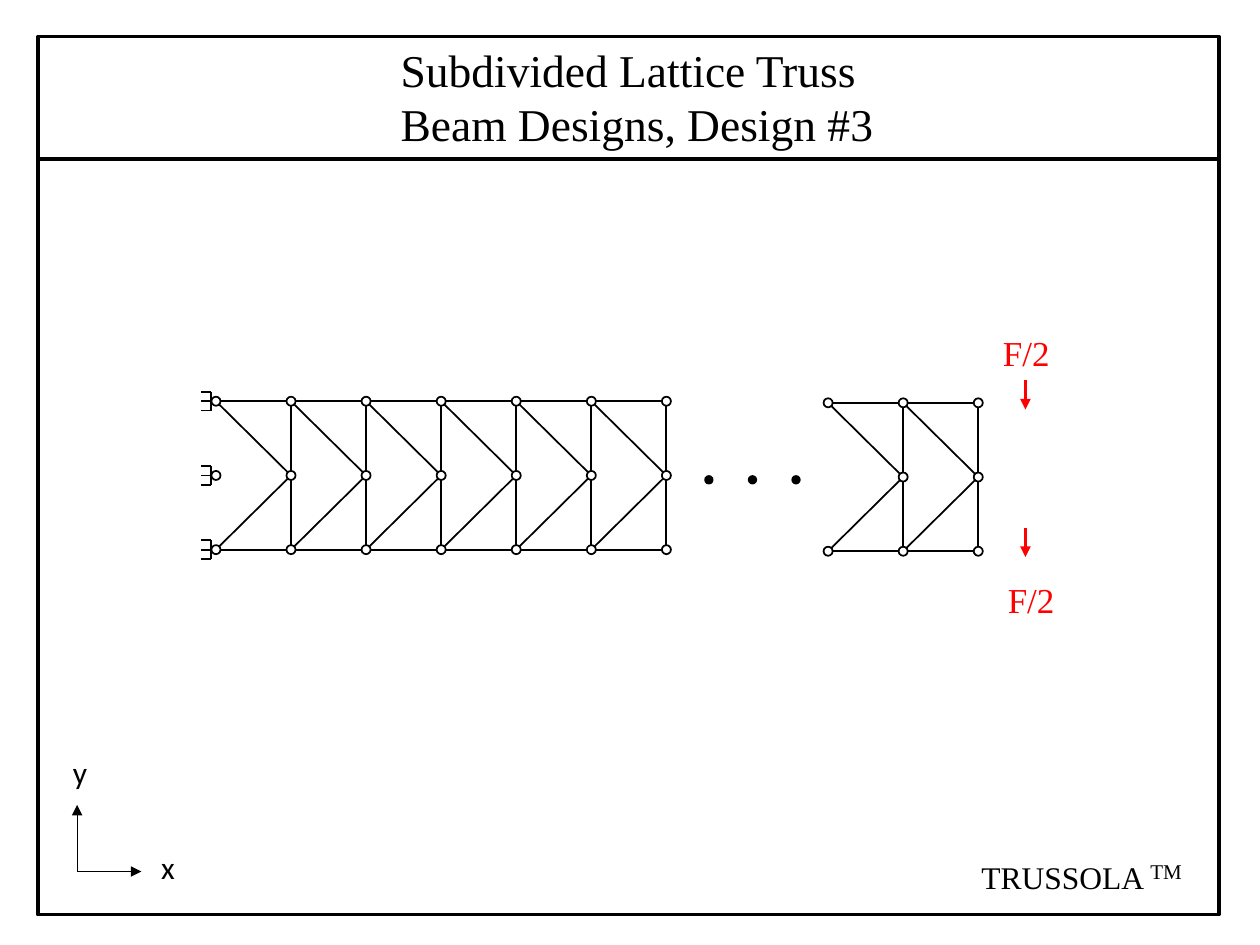
from dataclasses import dataclass

from lxml.etree import SubElement
from pptx import Presentation
from pptx.dml.color import RGBColor
from pptx.enum.shapes import MSO_CONNECTOR, MSO_SHAPE
from pptx.enum.text import MSO_ANCHOR
from pptx.oxml.ns import qn
from pptx.shapes.shapetree import GroupShapes
from pptx.util import Pt

HUES = {"ink": "000000", "paper": "FFFFFF", "load": "FF0000"}
SERIF, SANS = "Times New Roman", "Calibri"
PITCH, RISE = 42.9, 42.4  # truss bay width and row height
NODE, DOT = 5.2, 4.3  # circle diameters


@dataclass
class Label:
    text: str
    left: float
    top: float
    width: float
    height: float
    size: float
    font: str = SERIF
    hue: str = "ink"
    anchor: MSO_ANCHOR = MSO_ANCHOR.TOP


@dataclass
class Truss:
    left: float
    top: float
    bays: int

    def point(self, col: int, row: int) -> tuple[float, float]:
        return self.left + col * PITCH, self.top + row * RISE


def tint(name: str) -> RGBColor:
    return RGBColor.from_string(HUES[name])


def draw_line(shapes: GroupShapes, start: tuple, end: tuple,
              width: float = 1, hue: str = "ink", arrow: bool = False) -> None:
    line = shapes.add_connector(MSO_CONNECTOR.STRAIGHT,
                                *(Pt(n) for n in (*start, *end)))
    line.line.width = Pt(width)
    line.line.color.rgb = tint(hue)
    props = line.element.spPr
    if arrow:
        SubElement(props.find(qn("a:ln")), qn("a:tailEnd"), type="triangle")
    SubElement(props, qn("a:effectLst"))


def draw_node(shapes: GroupShapes, x: float, y: float,
              size: float = NODE, hue: str = "paper") -> None:
    node = shapes.add_shape(MSO_SHAPE.OVAL, Pt(x - size / 2), Pt(y - size / 2),
                            Pt(size), Pt(size))
    node.shadow.inherit = False
    node.fill.solid()
    node.fill.fore_color.rgb = tint(hue)
    node.line.color.rgb = tint("ink")
    node.line.width = Pt(1)


def draw_label(shapes: GroupShapes, label: Label) -> None:
    box = shapes.add_textbox(Pt(label.left), Pt(label.top),
                             Pt(label.width), Pt(label.height))
    frame = box.text_frame
    frame.word_wrap = True
    frame.vertical_anchor = label.anchor
    frame.text = label.text
    style = {"size": Pt(label.size), "name": label.font}
    for para in frame.paragraphs:
        for key, value in style.items():
            setattr(para.runs[0].font, key, value)
        para.runs[0].font.color.rgb = tint(label.hue)


def draw_truss(shapes: GroupShapes, truss: Truss) -> None:
    at = truss.point
    # Chords, diagonals and posts of each bay
    for col in range(truss.bays):
        mid = at(col + 1, 1)
        for row in (0, 2):
            draw_line(shapes, at(col, row), at(col + 1, row))
            draw_line(shapes, at(col, row), mid)
            draw_line(shapes, at(col + 1, row), mid)
    # Joints; the first column has no middle joint
    for col in range(truss.bays + 1):
        for row in range(3):
            if col or row != 1:
                draw_node(shapes, *at(col, row))


def draw_mount(shapes: GroupShapes, x: float, y: float) -> None:
    wall, half, tick = x - 3, 5.3, 5.4
    draw_line(shapes, (wall, y - half), (wall, y + half))
    for step in (-half, 0, half):
        draw_line(shapes, (wall - tick, y + step), (wall, y + step))


def main() -> None:
    deck = Presentation()
    deck.slide_width, deck.slide_height = Pt(720), Pt(540)
    shapes = deck.slides.add_slide(deck.slide_layouts[6]).shapes

    # Frame and title rule
    frame = shapes.add_shape(MSO_SHAPE.RECTANGLE, Pt(21.6), Pt(20.9),
                             Pt(674.9), Pt(501.8))
    frame.shadow.inherit = False
    frame.fill.background()
    frame.line.color.rgb = tint("ink")
    frame.line.width = Pt(2)
    draw_line(shapes, (21.6, 90.8), (696.5, 90.8), 2)

    # Both beam ends, the wall mounts and the dots between
    beam = shapes.add_group_shape().shapes
    near, far = Truss(123.4, 229.3, 6), Truss(473.2, 230.2, 2)
    for truss in (near, far):
        draw_truss(beam, truss)
    for row in range(3):
        draw_mount(beam, *near.point(0, row))
    draw_node(beam, *near.point(0, 1))
    for step in range(3):
        draw_node(beam, 405.1 + step * 24.9, 274.2, DOT, "ink")

    # Axes
    axes = shapes.add_group_shape().shapes
    for tip in ((80.8, 498), (44.1, 460)):
        draw_line(axes, (44.1, 498), tip, 0.5, arrow=True)
    draw_label(axes, Label("x", 85, 481, 22.3, 28.8, 18, SANS))
    draw_label(axes, Label("y", 34.5, 426.5, 22.3, 28.8, 18, SANS))

    # Loads
    for top in (217.4, 301.7):
        draw_line(shapes, (586, top), (586, top + 16.6), 2, "load", True)
    draw_label(shapes, Label("F/2", 566, 185.8, 50.4, 31.7, 20, hue="load"))
    draw_label(shapes, Label("F/2", 568.8, 326.9, 45.4, 31.7, 20, hue="load"))

    # Title
    draw_label(shapes, Label("Subdivided Lattice Truss\nBeam Designs, Design #3",
                             221.8, 20.2, 293.8, 70.6, 26))

    # Product mark
    mark = shapes.add_group_shape().shapes
    draw_label(mark, Label("TRUSSOLA", 553.7, 486.7, 109.4, 28.8, 18))
    draw_label(mark, Label("TM", 650.2, 479.5, 36.7, 28.8, 12,
                           anchor=MSO_ANCHOR.BOTTOM))

    deck.save("out.pptx")


if __name__ == "__main__":
    main()
